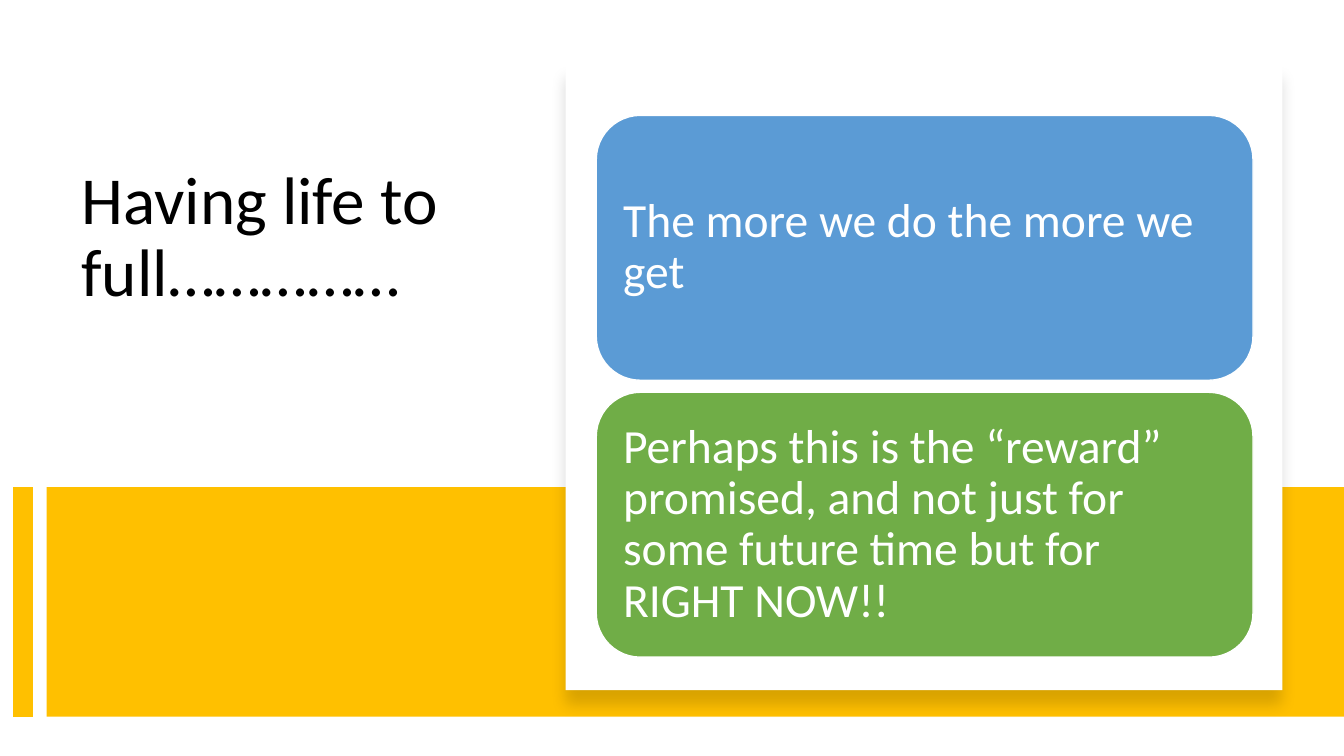
from dataclasses import dataclass

from lxml.etree import SubElement
from pptx import Presentation
from pptx.dml.color import RGBColor
from pptx.enum.shapes import MSO_CONNECTOR, MSO_SHAPE
from pptx.enum.text import MSO_ANCHOR, PP_ALIGN
from pptx.oxml.ns import qn
from pptx.shapes.autoshape import Shape
from pptx.slide import Slide
from pptx.text.text import TextFrame
from pptx.util import Pt


@dataclass(frozen=True)
class Theme:
    font: str = "Calibri"
    title_size: float = 48
    card_size: float = 34
    ink: str = "000000"
    paper: str = "FFFFFF"
    band: str = "FFC000"
    blue: str = "5B9BD5"
    green: str = "70AD47"


@dataclass(frozen=True)
class Box:
    x: float
    y: float
    w: float
    h: float


@dataclass(frozen=True)
class Card:
    text: str
    fill: str


THEME = Theme()
TITLE = Box(51.1, 115.2, 298.8, 211.7)
BAND = Box(33.4, 347.9, 926.6, 164)
PANEL = Box(404.1, 46.2, 512, 446.8)
FIRST_CARD = Box(425.9, 82.4, 469.1, 189.2)
CARD_PITCH = 197.8
STRIPE_X = 16.3
STRIPE_WIDTH = 14
CARD_INSET = 10
CARDS = [
    Card("The more we do the more we get", THEME.blue),
    Card(
        "Perhaps this is the “reward” promised, and not just for some "
        "future time but for RIGHT NOW!!",
        THEME.green,
    ),
]


def rgb(color: str) -> RGBColor:
    return RGBColor.from_string(color)


def add_block(s: Slide, kind: MSO_SHAPE, box: Box, fill: str) -> Shape:
    sp = s.shapes.add_shape(kind, Pt(box.x), Pt(box.y), Pt(box.w), Pt(box.h))
    sp.shadow.inherit = False
    sp.fill.solid()
    sp.fill.fore_color.rgb = rgb(fill)
    sp.line.fill.background()
    return sp


def write(tf: TextFrame, text: str, size: float, color: str) -> None:
    tf.word_wrap = True
    p = tf.paragraphs[0]
    p.alignment = PP_ALIGN.LEFT
    p.line_spacing = 0.9
    r = p.add_run()
    r.text = text
    r.font.name = THEME.font
    r.font.size = Pt(size)
    r.font.color.rgb = rgb(color)


def add_title(s: Slide, box: Box, text: str) -> None:
    sp = s.shapes.add_textbox(Pt(box.x), Pt(box.y), Pt(box.w), Pt(box.h))
    write(sp.text_frame, text, THEME.title_size, THEME.ink)


def add_stripe(s: Slide) -> None:
    x = Pt(STRIPE_X)
    line = s.shapes.add_connector(
        MSO_CONNECTOR.STRAIGHT, x, Pt(BAND.y), x, Pt(BAND.y + BAND.h)
    )
    line.line.color.rgb = rgb(THEME.band)
    line.line.width = Pt(STRIPE_WIDTH)
    SubElement(line._element.spPr, qn("a:effectLst"))


def add_panel(s: Slide) -> None:
    sp = add_block(s, MSO_SHAPE.RECTANGLE, PANEL, THEME.paper)
    effects = sp._element.spPr.find(qn("a:effectLst"))
    shadow = SubElement(
        effects,
        qn("a:outerShdw"),
        blurRad=str(Pt(11)),
        dist=str(Pt(10)),
        dir="5400000",
        algn="t",
        rotWithShape="0",
    )
    color = SubElement(shadow, qn("a:srgbClr"), val=THEME.ink)
    SubElement(color, qn("a:alpha"), val="15000")


def add_card(s: Slide, card: Card, box: Box) -> None:
    sp = add_block(s, MSO_SHAPE.ROUNDED_RECTANGLE, box, card.fill)
    sp.line.color.rgb = rgb(THEME.paper)
    sp.line.width = Pt(1)
    tf = sp.text_frame
    tf.vertical_anchor = MSO_ANCHOR.MIDDLE
    tf.margin_left = tf.margin_right = Pt(CARD_INSET)
    tf.margin_top = tf.margin_bottom = Pt(CARD_INSET)
    write(tf, card.text, THEME.card_size, THEME.paper)


def main() -> None:
    prs = Presentation()
    prs.slide_width, prs.slide_height = Pt(960), Pt(540)
    s = prs.slides.add_slide(prs.slide_layouts[6])
    add_title(s, TITLE, "Having life to full……………")
    add_block(s, MSO_SHAPE.RECTANGLE, BAND, THEME.band)
    add_stripe(s)
    add_panel(s)
    for i, card in enumerate(CARDS):
        y = FIRST_CARD.y + i * CARD_PITCH
        add_card(s, card, Box(FIRST_CARD.x, y, FIRST_CARD.w, FIRST_CARD.h))
    prs.save("out.pptx")


if __name__ == "__main__":
    main()
